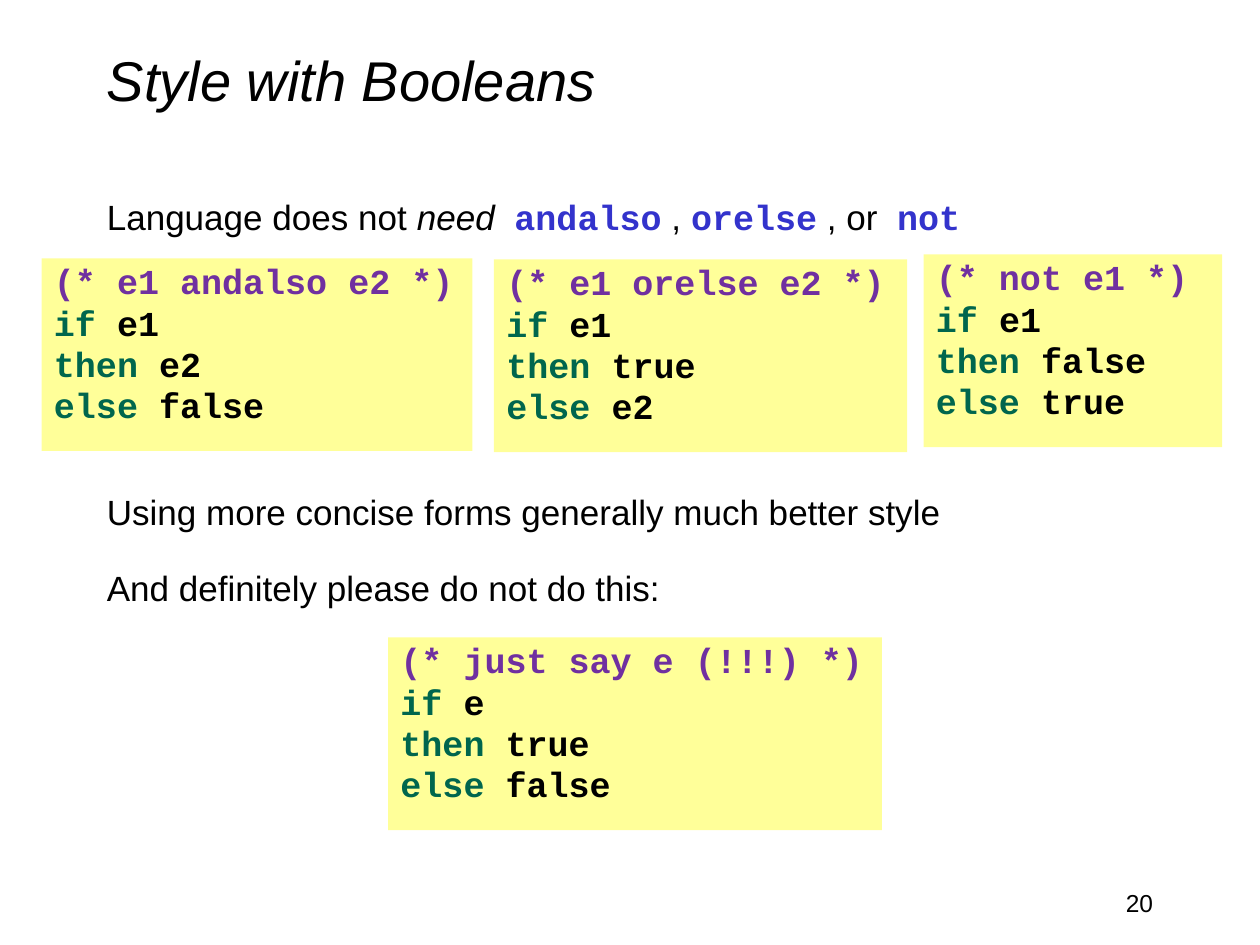
from pptx import Presentation
from pptx.dml.color import RGBColor
from pptx.enum.shapes import MSO_SHAPE
from pptx.enum.text import MSO_ANCHOR, PP_ALIGN
from pptx.util import Inches, Pt

COLORS = {"text": "000000", "operator": "3333CC", "comment": "7030A0",
          "keyword": "00664D", "code_fill": "FFFF99"}


def add_text(x, y, w, h, anchor=MSO_ANCHOR.TOP):
    tf = s.shapes.add_textbox(Inches(x), Inches(y), Inches(w), Inches(h)).text_frame
    tf.word_wrap = True
    tf.vertical_anchor = anchor
    return tf


def add_run(p, text, color="text", font="Arial", size=20, bold=False, italic=False):
    r = p.add_run()
    r.text = text
    r.font.name = font
    r.font.size = Pt(size)
    r.font.bold = bold
    r.font.italic = italic
    r.font.color.rgb = RGBColor.from_string(COLORS[color])


prs = Presentation()
prs.slide_width, prs.slide_height = Inches(10), Inches(7.5)
s = prs.slides.add_slide(prs.slide_layouts[6])

tf = add_text(0.75, 0, 8.5, 1.25, MSO_ANCHOR.MIDDLE)
add_run(tf.paragraphs[0], "Style with Booleans", size=32, italic=True)

tf = add_text(0.75, 1.5, 8.67, 4.92)
p = tf.paragraphs[0]
p.space_before = Pt(2)
add_run(p, "Language does not ")
add_run(p, "need  ", italic=True)
for operator, separator in [("andalso", " , "), ("orelse", " , or "), ("not", "")]:
    add_run(p, operator, "operator", "Courier New", bold=True)
    if separator:
        add_run(p, separator)
    if operator == "orelse":
        add_run(p, " ", italic=True)
for text, gap in [("Using more concise forms generally much better style", 145),
                  ("And definitely please do not do this:", 19)]:
    p = tf.add_paragraph()
    p.space_before = Pt(gap)
    add_run(p, text)

tf = add_text(7.17, 7, 2.08, 0.5)
p = tf.paragraphs[0]
p.alignment = PP_ALIGN.RIGHT
add_run(p, "20", size=14)

code_boxes = [
    (0.33, 2.05, 3.42, "(* e1 andalso e2 *)", "e1", "e2", "false"),
    (3.92, 2.06, 3.28, "(* e1 orelse e2 *)", "e1", "true", "e2"),
    (3.08, 5.06, 3.92, "(* just say e (!!!) *)", "e", "true", "false"),
    (7.33, 2.02, 2.37, "(* not e1 *)", "e1", "false", "true"),
]
for x, y, w, comment, *values in code_boxes:
    sp = s.shapes.add_shape(MSO_SHAPE.RECTANGLE, Inches(x), Inches(y), Inches(w), Inches(1.53))
    sp.shadow.inherit = False
    sp.fill.solid()
    sp.fill.fore_color.rgb = RGBColor.from_string(COLORS["code_fill"])
    sp.line.fill.background()
    tf = sp.text_frame
    tf.word_wrap = True
    tf.vertical_anchor = MSO_ANCHOR.TOP
    add_run(tf.paragraphs[0], comment, "comment", "Courier New", bold=True)
    for keyword, value in zip(["if ", "then ", "else "], values):
        p = tf.add_paragraph()
        add_run(p, keyword, "keyword", "Courier New", bold=True)
        add_run(p, value, "text", "Courier New", bold=True)
    for p in tf.paragraphs:
        p.alignment = PP_ALIGN.LEFT
        p.line_spacing = 0.9
        p.space_before = Pt(2)
        pPr = p._p.get_or_add_pPr()
        pPr.set("marL", str(Inches(0.38)))
        pPr.set("indent", str(-Inches(0.38)))

prs.save("out.pptx")
